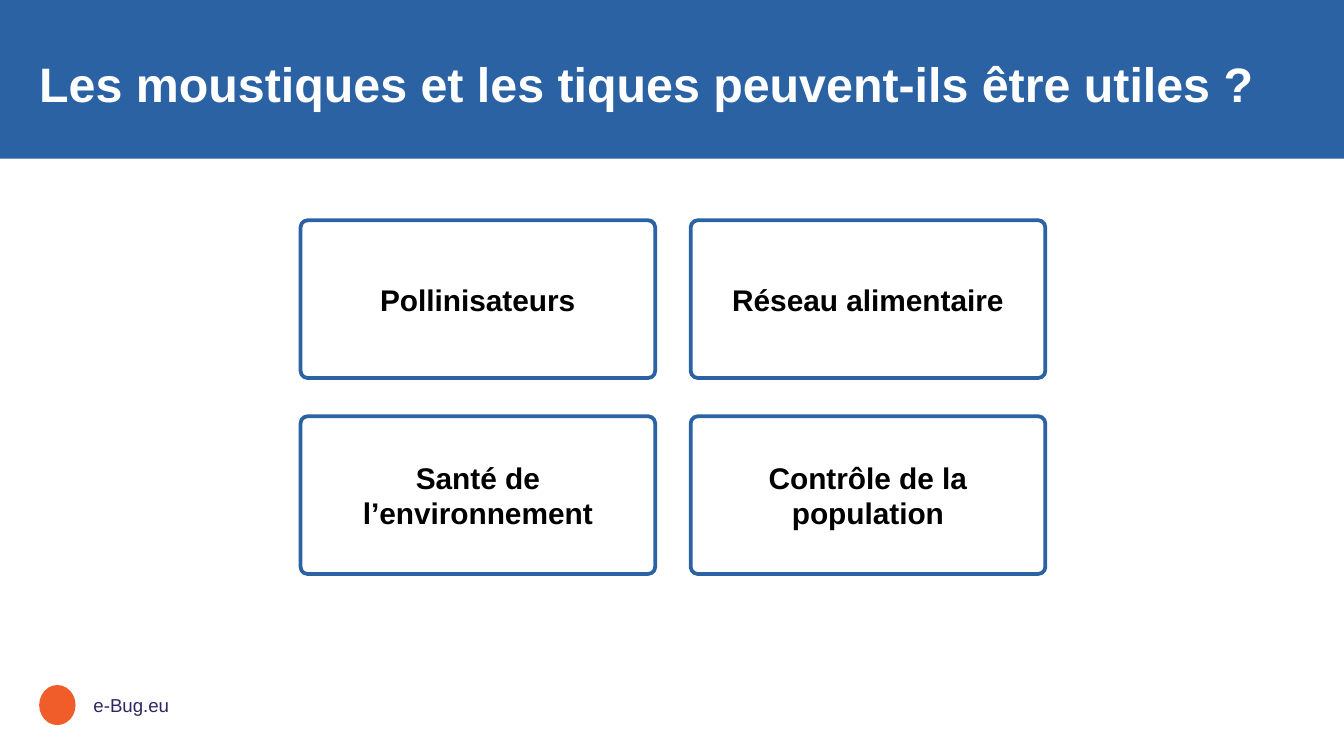
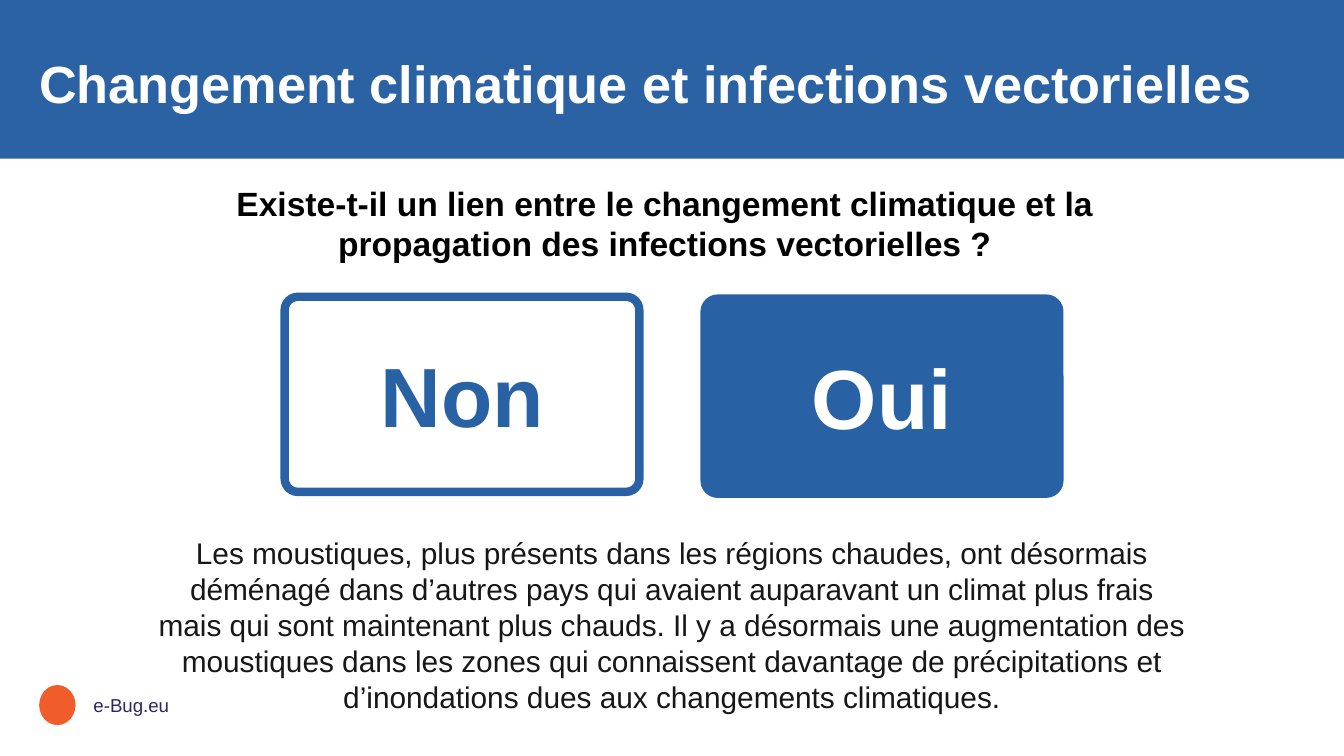
from pptx import Presentation
from pptx.dml.color import RGBColor
from pptx.enum.shapes import MSO_SHAPE
from pptx.enum.text import MSO_ANCHOR, PP_ALIGN
from pptx.util import Pt

RECT, ROUNDED, OVAL = MSO_SHAPE.RECTANGLE, MSO_SHAPE.ROUNDED_RECTANGLE, MSO_SHAPE.OVAL
TOP, MIDDLE = MSO_ANCHOR.TOP, MSO_ANCHOR.MIDDLE
LEFT, CENTER = PP_ALIGN.LEFT, PP_ALIGN.CENTER

COLORS = {
    "band": "2A62A4",
    "answer": "2862A5",
    "white": "FFFFFF",
    "black": "000000",
    "body": "181717",
    "footer": "302564",
    "emblem": "F05D2A",
}
DEFAULT_INSETS = (7.2, 3.6, 7.2, 3.6)
HEADING_INSETS = (0, 3.6, 7.2, 3.6)
CARD_INSETS = (8.6, 5.8, 8.6, 5.8)


def rgb(name):
    return RGBColor.from_string(COLORS[name])


class Deck:
    """Holds the shared style and the slide being built."""

    font_name = "Arial"

    def __init__(self):
        self.prs = Presentation()
        self.prs.slide_width, self.prs.slide_height = Pt(720), Pt(405)
        self.slide = None

    def new_slide(self, title, title_size):
        self.slide = self.prs.slides.add_slide(self.prs.slide_layouts[6])
        # Title band
        self.shape(RECT, (0, 0, 720, 85), fill="band")
        self.text((21, 21, 674.5, 51), title, title_size, "white", bold=True,
                  align=LEFT, anchor=MIDDLE, insets=HEADING_INSETS, spacing=0.9)
        # Footer
        self.shape(OVAL, (21, 367, 19.5, 21.5), fill="emblem")
        self.text((43, 368, 60, 21.5), "e-Bug.eu", 10, "footer", align=LEFT)

    def shape(self, kind, box, fill, line=None, line_width=1, corner=None):
        shape = self.slide.shapes.add_shape(kind, *map(Pt, box))
        shape.shadow.inherit = False
        shape.fill.solid()
        shape.fill.fore_color.rgb = rgb(fill)
        if line:
            shape.line.color.rgb = rgb(line)
            shape.line.width = Pt(line_width)
        else:
            shape.line.fill.background()
        if corner is not None:
            shape.adjustments[0] = corner
        return shape

    def text(self, box, *content, **style):
        textbox = self.slide.shapes.add_textbox(*map(Pt, box))
        self.set_text(textbox, *content, **style)

    def set_text(self, holder, wording, size, color, bold=False, align=CENTER,
                 anchor=TOP, insets=DEFAULT_INSETS, spacing=None):
        frame = holder.text_frame
        left, top, right, bottom = map(Pt, insets)
        paragraph = frame.paragraphs[0]
        paragraph.text = wording
        font = paragraph.runs[0].font
        formats = (
            (frame, {"word_wrap": True, "vertical_anchor": anchor,
                     "margin_left": left, "margin_top": top,
                     "margin_right": right, "margin_bottom": bottom}),
            (paragraph, {"alignment": align, "line_spacing": spacing}),
            (font, {"name": self.font_name, "size": Pt(size), "bold": bold}),
        )
        for target, values in formats:
            for attribute, value in values.items():
                setattr(target, attribute, value)
        font.color.rgb = rgb(color)

    def card(self, box, wording):
        card = self.shape(ROUNDED, box, "white", "band", 2, corner=0.045)
        self.set_text(card, wording, 16, "black", bold=True, anchor=MIDDLE, insets=CARD_INSETS)

    def answer(self, left, top, wording, fill, color):
        answer = self.shape(ROUNDED, (left, top, 190, 104.5), fill, "answer", 4.5, corner=0.067)
        self.set_text(answer, wording, 45, color, bold=True, anchor=MIDDLE)


def build_benefits(deck):
    deck.new_slide("Les moustiques et les tiques peuvent-ils être utiles ?", 25.9)
    # Two-by-two grid of benefits
    benefits = ("Pollinisateurs", "Réseau alimentaire",
                "Santé de l’environnement", "Contrôle de la population")
    for index, benefit in enumerate(benefits):
        row, column = divmod(index, 2)
        deck.card((161 + 209 * column, 118 + 105 * row, 190, 84.5), benefit)


def build_climate(deck):
    deck.new_slide("Changement climatique et infections vectorielles", 28)
    # Question
    deck.text((124, 94.5, 471.5, 51),
              "Existe-t-il un lien entre le changement climatique et la "
              "propagation des infections vectorielles ?",
              18, "black", bold=True, insets=HEADING_INSETS)
    # Answers
    deck.answer(152.5, 159, "Non", fill="white", color="answer")
    deck.answer(377.5, 160, "Oui", fill="answer", color="white")
    # Explanation
    deck.text((77, 283, 566, 104.5),
              "Les moustiques, plus présents dans les régions chaudes, ont désormais "
              "déménagé dans d’autres pays qui avaient auparavant un climat plus frais "
              "mais qui sont maintenant plus chauds. Il y a désormais une augmentation "
              "des moustiques dans les zones qui connaissent davantage de précipitations "
              "et d’inondations dues aux changements climatiques.",
              16, "body")


def main():
    deck = Deck()
    build_benefits(deck)
    build_climate(deck)
    deck.prs.save("out.pptx")


if __name__ == "__main__":
    main()
